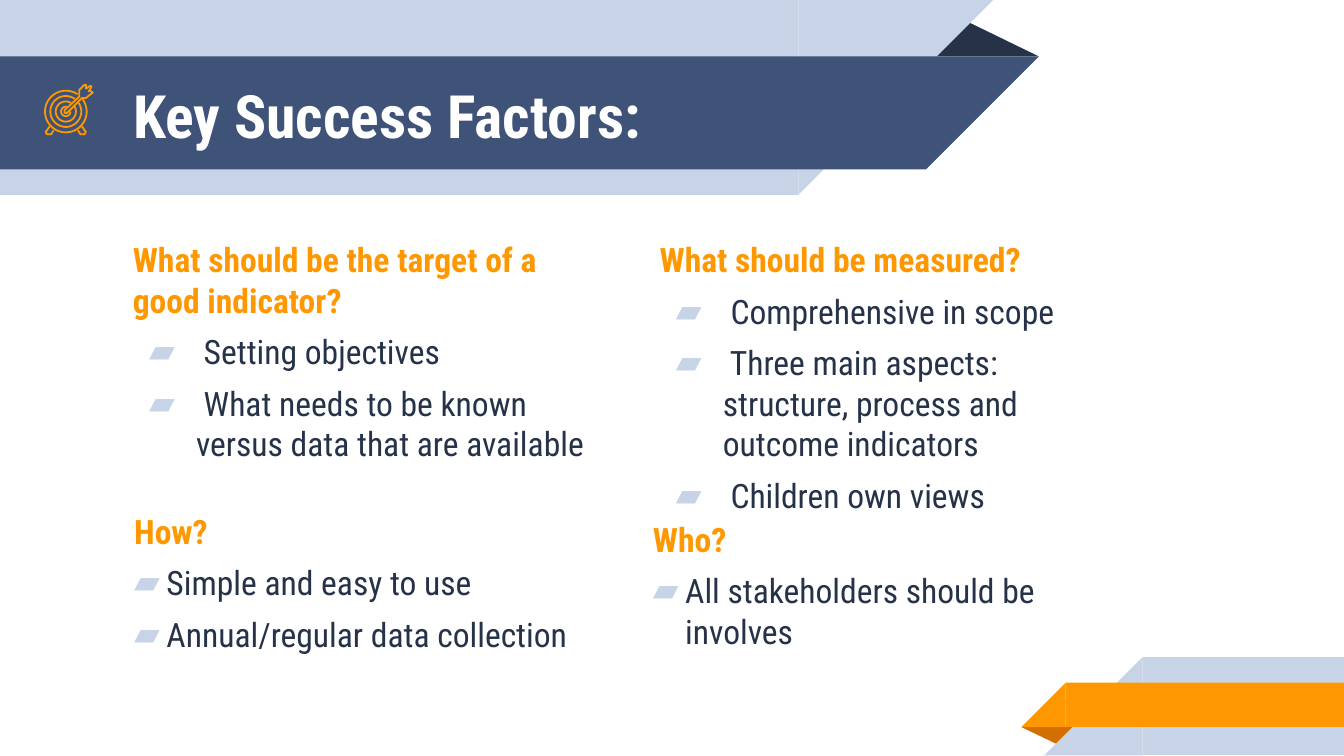
from math import cos, radians, sin

from lxml.etree import SubElement
from pptx import Presentation
from pptx.dml.color import RGBColor
from pptx.enum.shapes import MSO_SHAPE
from pptx.enum.text import MSO_ANCHOR, MSO_AUTO_SIZE, PP_ALIGN
from pptx.oxml.ns import qn
from pptx.util import Inches, Pt

NAVY = RGBColor(0x26, 0x32, 0x48)
BLUE = RGBColor(0x3F, 0x53, 0x78)
PALE = RGBColor(0xC7, 0xD3, 0xE6)
ORANGE = RGBColor(0xFF, 0x98, 0x00)
BROWN = RGBColor(0xD2, 0x6F, 0x00)
WHITE = RGBColor(0xFF, 0xFF, 0xFF)
FONT = "Roboto Condensed"
PAGE_WIDTH = 10
PAGE_HEIGHT = PAGE_WIDTH * 9 / 16

TARGET_CENTER = (0.49, 0.83)
RINGS = [(0.155, -36, 305), (0.115, -34, 308), (0.075, -34, 304), (0.035, 0, 290)]
FOOT = [(0.37, 0.94), (0.35, 0.97), (0.34, 0.98), (0.35, 1), (0.36, 1),
        (0.38, 1), (0.4, 0.97)]
ARROW = [(0.68, 0.68), (0.66, 0.68), (0.68, 0.65), (0.68, 0.64), (0.67, 0.64),
         (0.64, 0.66), (0.64, 0.63), (0.63, 0.63), (0.59, 0.67), (0.59, 0.72),
         (0.48, 0.82), (0.48, 0.84), (0.5, 0.84), (0.61, 0.73), (0.64, 0.73),
         (0.65, 0.72), (0.69, 0.69)]

SECTIONS = [
    (0.89, 1.68, 1.84, 0.47, 0.35, "What should be the target of a good indicator?",
     [" Setting objectives", " What needs to be known versus data that are available"]),
    (4.81, 1.68, 2, 0.47, 0.35, "What should be measured?",
     [" Comprehensive in scope",
      " Three main aspects: structure, process and outcome indicators",
      " Children own views"]),
    (0.9, 3.7, 1.49, 0.24, 0.24, "How?",
     ["Simple and easy to use", "Annual/regular data collection"]),
    (4.76, 3.76, 1.49, 0.24, 0.24, "Who?", ["All stakeholders should be involves"]),
]


def add_block(page, kind, left, top, width, height, color, rotation=0):
    """Add a plain filled shape."""
    block = page.shapes.add_shape(
        kind, Inches(left), Inches(top), Inches(width), Inches(height))
    block.shadow.inherit = False
    block.fill.solid()
    block.fill.fore_color.rgb = color
    block.line.fill.background()
    block.rotation = rotation
    return block


def add_fold(page, left, top, width, height, color, rotation=0):
    """Add the small dark triangle behind a ribbon."""
    fold = add_block(page, MSO_SHAPE.ISOSCELES_TRIANGLE, left, top, width, height,
                     color, rotation)
    fold.adjustments[0] = 0.324


def add_left_ribbon(page, top, width, height, color):
    """Add a ribbon from the left edge with a slanted right end."""
    add_block(page, MSO_SHAPE.RECTANGLE, 0, top, width, height, color)
    add_block(page, MSO_SHAPE.RIGHT_TRIANGLE, width, top, height, height, color, 90)


def add_right_ribbon(page, left, top, height, color):
    """Add a ribbon to the right edge with a slanted left end."""
    add_block(page, MSO_SHAPE.RECTANGLE, left, top, PAGE_WIDTH - left, height, color)
    add_block(page, MSO_SHAPE.RIGHT_TRIANGLE, left - height, top, height, height,
              color, 270)


def add_outline(page, points, close=False):
    """Draw an unfilled orange line through points."""
    start, *rest = [(Inches(x), Inches(y)) for x, y in points]
    builder = page.shapes.build_freeform(*start)
    builder.add_line_segments(rest, close=close)
    outline = builder.convert_to_shape()
    outline.shadow.inherit = False
    outline.fill.background()
    outline.line.color.rgb = ORANGE
    outline.line.width = Pt(0.96)


def add_target_icon(page):
    """Draw the rings, feet and arrow of the target."""
    center_x, center_y = TARGET_CENTER
    for radius, start, end in RINGS:
        angles = [radians(angle) for angle in range(start, end + 1, 5)]
        add_outline(page, [(center_x + radius * cos(angle), center_y + radius * sin(angle))
                           for angle in angles])
    add_outline(page, FOOT)
    add_outline(page, [(2 * center_x - x, y) for x, y in FOOT])
    add_outline(page, ARROW, close=True)


def format_frame(frame, anchor):
    """Set wrapping, insets and anchor of a text frame."""
    frame.word_wrap = True
    frame.auto_size = MSO_AUTO_SIZE.NONE
    frame.vertical_anchor = anchor
    frame.margin_left = frame.margin_right = Inches(0.1)
    frame.margin_top = frame.margin_bottom = Inches(0.1)


def format_paragraph(para, size, color, bold):
    """Left-align a paragraph and format its runs."""
    para.alignment = PP_ALIGN.LEFT
    for span in para.runs:
        span.font.name = FONT
        span.font.size = Pt(size)
        span.font.bold = bold
        span.font.color.rgb = color


def add_bullet(para, margin, hanging):
    """Give a paragraph a pale slanted bullet."""
    properties = para._p.get_or_add_pPr()
    properties.set("marL", str(Inches(margin)))
    properties.set("indent", str(-Inches(hanging)))
    color = SubElement(properties, qn("a:buClr"))
    SubElement(color, qn("a:srgbClr"), val=str(PALE))
    SubElement(properties, qn("a:buFont"), typeface=FONT)
    SubElement(properties, qn("a:buChar"), char="▰")


def add_title(page, text):
    """Place and format the title placeholder."""
    title = page.shapes.title
    title.left, title.top = Inches(0.89), Inches(0.43)
    title.width, title.height = Inches(5.75), Inches(0.84)
    title.text_frame.text = text
    format_frame(title.text_frame, MSO_ANCHOR.MIDDLE)
    format_paragraph(title.text_frame.paragraphs[0], 32, WHITE, True)


def add_section(page, left, top, height, margin, hanging, heading, items):
    """Add a heading with its bulleted items."""
    box = page.shapes.add_textbox(Inches(left), Inches(top), Inches(3.69), Inches(height))
    frame = box.text_frame
    format_frame(frame, MSO_ANCHOR.TOP)
    frame.text = "\n".join([heading, *items])
    for index, para in enumerate(frame.paragraphs):
        para.space_before = Pt(6)
        format_paragraph(para, 18, NAVY if index else ORANGE, index == 0)
        if index:
            add_bullet(para, margin, hanging)


def main():
    """Build the slide and save it."""
    deck = Presentation()
    deck.slide_width, deck.slide_height = Inches(PAGE_WIDTH), Inches(PAGE_HEIGHT)
    page = deck.slides.add_slide(deck.slide_layouts[5])
    add_fold(page, 6.88, 0.14, 0.85, 0.28, NAVY)
    add_left_ribbon(page, 0, 5.94, 1.45, PALE)
    add_left_ribbon(page, 0.42, 6.89, 0.84, BLUE)
    add_fold(page, 7.6, 5.41, 0.43, 0.14, BROWN, 180)
    add_right_ribbon(page, 8.5, 4.89, 0.73, PALE)
    add_right_ribbon(page, 7.93, 5.08, 0.33, ORANGE)
    page.shapes._spTree.append(page.shapes.title._element)
    add_title(page, "Key Success Factors:")
    for section in SECTIONS:
        add_section(page, *section)
    add_target_icon(page)
    deck.save("out.pptx")


if __name__ == "__main__":
    main()
